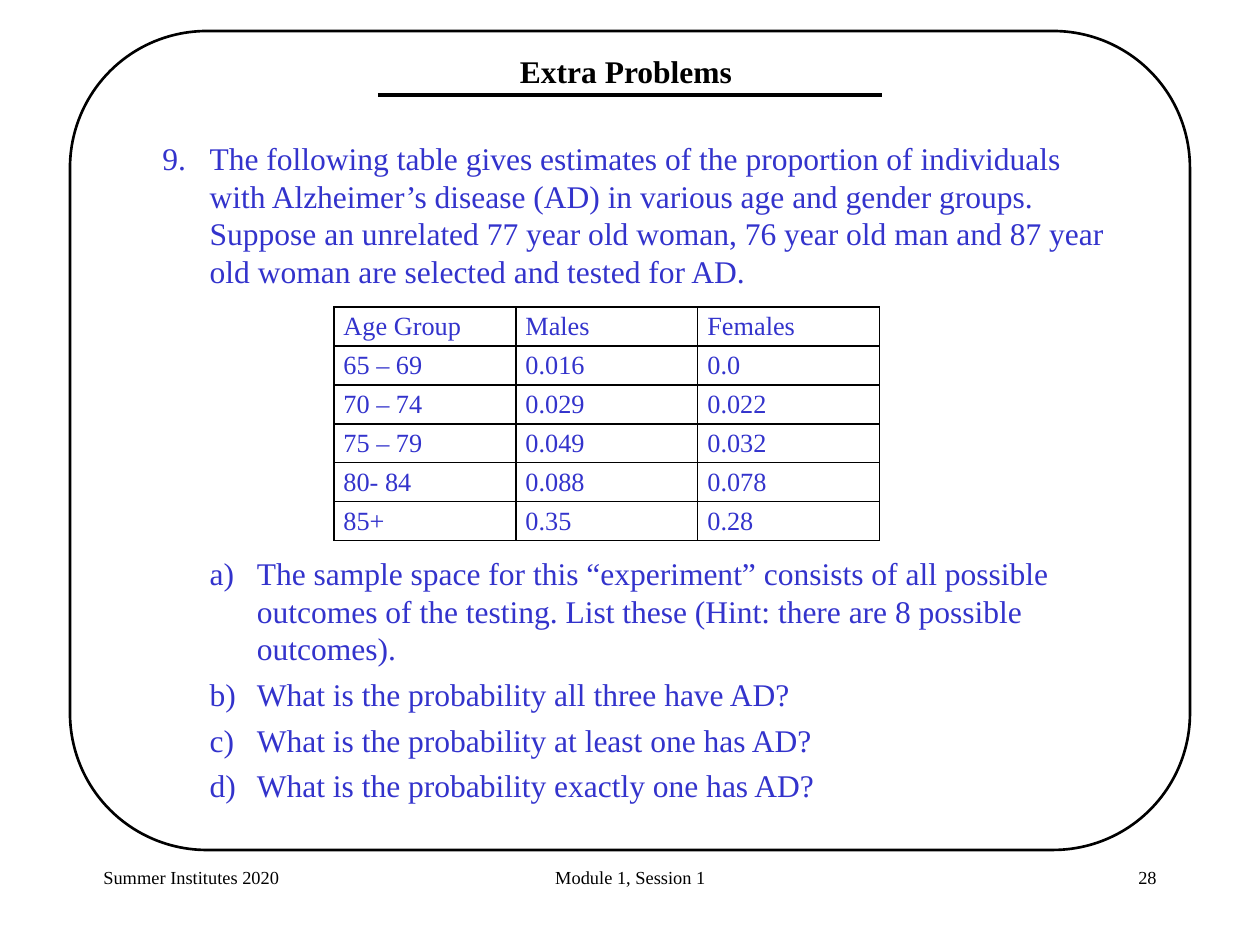
from lxml.etree import SubElement as Sub
from pptx import Presentation
from pptx.dml.color import RGBColor
from pptx.enum.shapes import MSO_CONNECTOR as Conn, MSO_SHAPE as Shape
from pptx.enum.text import MSO_ANCHOR as Anchor, MSO_AUTO_SIZE as Fit, PP_ALIGN as Align
from pptx.oxml.ns import qn
from pptx.util import Pt

UNIT = 9676  # EMU in one px
FONT = "Times New Roman"
BLACK, BLUE = "000000", "3333CC"


def px(n):
    return int(n * UNIT)


def tint(code):
    return RGBColor.from_string(code)


class Page:
    text = {
        "title": ({"name": FONT, "size": Pt(24), "bold": True}, BLACK),
        "body": ({"name": FONT, "size": Pt(24), "bold": False}, BLUE),
        "cell": ({"name": FONT, "size": Pt(20), "bold": False}, BLUE),
        "foot": ({"name": FONT, "size": Pt(14), "bold": False}, BLACK),
    }

    def __init__(self, slide):
        self.slide = slide
        self.shapes = slide.shapes

    def place(self, shape, box):
        for key, val in zip(("left", "top", "width", "height"), box):
            setattr(shape, key, px(val))

    def frame(self, shape):
        form = {"word_wrap": True, "auto_size": Fit.NONE,
                "vertical_anchor": Anchor.TOP}
        for key, val in form.items():
            setattr(shape.text_frame, key, val)
        return shape.text_frame

    def label(self, para, words, style, align=Align.LEFT):
        run = para.add_run()
        run.text = words
        form, color = self.text[style]
        for key, val in form.items():
            setattr(run.font, key, val)
        run.font.color.rgb = tint(color)
        para.alignment = align

    def border(self, box):
        shape = self.shapes.add_shape(Shape.ROUNDED_RECTANGLE, *map(px, box))
        shape.adjustments[0] = 0.167
        shape.shadow.inherit = False
        shape.fill.background()
        shape.line.color.rgb = tint(BLACK)
        shape.line.width = Pt(2)

    def rule(self, x, y, end):
        line = self.shapes.add_connector(Conn.STRAIGHT, px(x), px(y), px(end), px(y))
        line.line.color.rgb = tint(BLACK)
        line.line.width = Pt(3)
        Sub(line._element.spPr, qn("a:effectLst"))

    def title(self, words, box):
        shape = self.shapes.title
        self.place(shape, box)
        self.label(self.frame(shape).paragraphs[0], words, "title", Align.CENTER)

    def note(self, words, box, align):
        shape = self.shapes.add_textbox(*map(px, box))
        self.label(self.frame(shape).paragraphs[0], words, "foot", align)

    def item(self, para, words, level, after, number):
        para.level = level
        para.space_before, para.space_after = Pt(0), Pt(after)
        self.label(para, words, "body")
        prop = para._p.get_or_add_pPr()
        prop.set("marL", str(457200 * (level + 1)))
        prop.set("indent", "-457200")
        Sub(prop, qn("a:buFont"), typeface=FONT)
        Sub(prop, qn("a:buAutoNum"), **number)

    def body(self, lead, parts, gap, box):
        shape = self.slide.placeholders[1]
        self.place(shape, box)
        frame = self.frame(shape)
        self.item(frame.paragraphs[0], lead, 0, gap,
                  {"type": "arabicPeriod", "startAt": "9"})
        for words in parts:
            self.item(frame.add_paragraph(), words, 1, 6,
                      {"type": "alphaLcParenR"})

    def edges(self, cell):
        prop = cell._tc.get_or_add_tcPr()
        for spot, side in enumerate(("lnL", "lnR", "lnT", "lnB")):
            line = Sub(prop, qn("a:" + side), w=str(Pt(1)))
            fill = Sub(line, qn("a:solidFill"))
            Sub(fill, qn("a:srgbClr"), val=BLACK)
            prop.insert(spot, line)

    def table(self, rows, x, y, wide, high):
        count, cols = len(rows), len(rows[0])
        grid = self.shapes.add_table(count, cols, px(x), px(y),
                                     px(wide * cols), px(high * count)).table
        grid.first_row = grid.horz_banding = False
        for r, row in enumerate(rows):
            for c, words in enumerate(row):
                cell = grid.cell(r, c)
                cell.fill.background()
                self.edges(cell)
                self.label(cell.text_frame.paragraphs[0], words, "cell")


def main():
    deck = Presentation()
    deck.slide_width, deck.slide_height = px(1260), px(945)
    page = Page(deck.slides.add_slide(deck.slide_layouts[1]))

    # Frame and footer
    page.border((70, 31, 1120, 819))
    page.note("Summer Institutes 2020", (94, 861, 263, 63), Align.LEFT)
    page.note("Module 1, Session 1", (431, 861, 399, 63), Align.CENTER)
    page.note("28", (903, 861, 263, 63), Align.RIGHT)

    # Heading
    page.title("Extra Problems", (425, 47, 402, 47))
    page.rule(378, 95, 882)

    # Problem and its questions, with room for the table between
    page.body(
        "The following table gives estimates of the proportion of individuals "
        "with Alzheimer’s disease (AD) in various age and gender groups. "
        "Suppose an unrelated 77 year old woman, 76 year old man and 87 year "
        "old woman are selected and tested for AD.",
        ("The sample space for this “experiment” consists of all possible "
         "outcomes of the testing. List these (Hint: there are 8 possible outcomes).",
         "What is the probability all three have AD?",
         "What is the probability at least one has AD?",
         "What is the probability exactly one has AD?"),
        201, (153, 134, 965, 682))

    # Rates by age and gender
    page.table((
        ("Age Group", "Males", "Females"),
        ("65 – 69", "0.016", "0.0"),
        ("70 – 74", "0.029", "0.022"),
        ("75 – 79", "0.049", "0.032"),
        ("80- 84", "0.088", "0.078"),
        ("85+", "0.35", "0.28"),
    ), 334, 307, 182, 39)

    deck.save("out.pptx")


if __name__ == "__main__":
    main()
